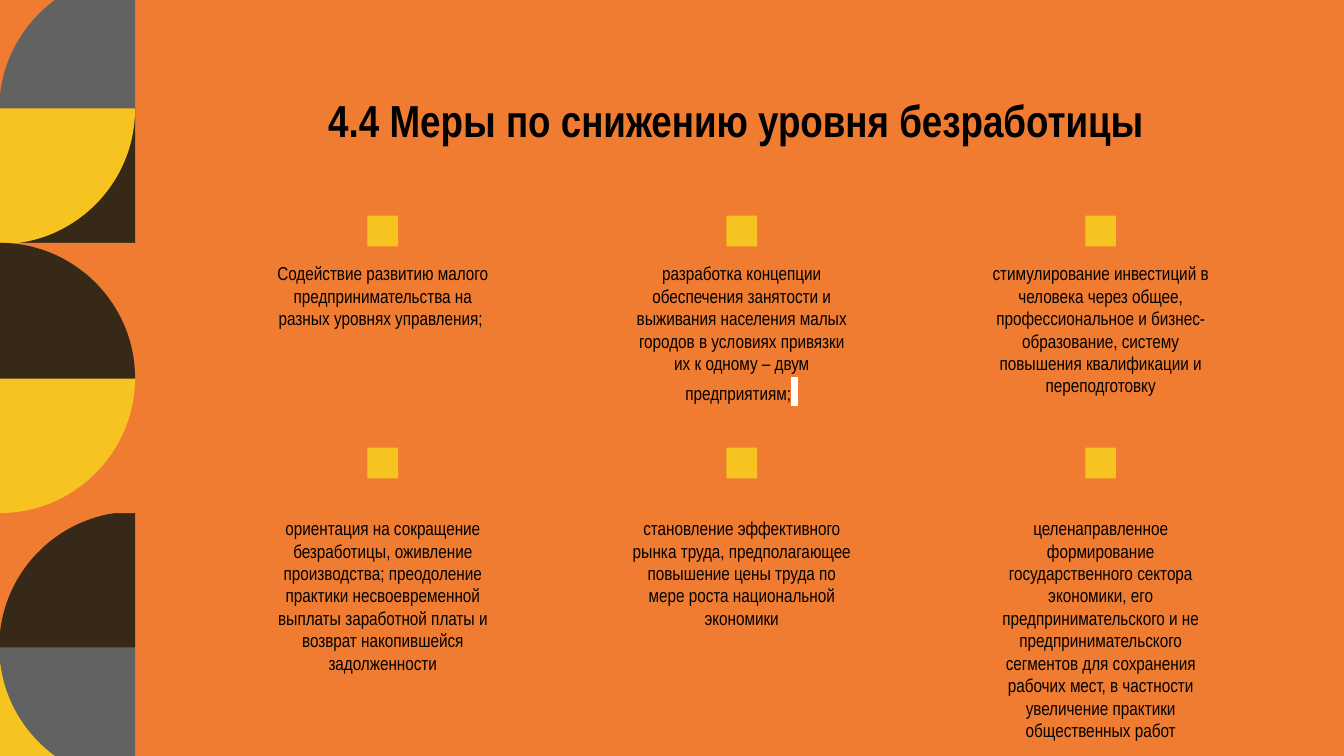
from lxml import etree
from pptx import Presentation
from pptx.dml.color import RGBColor
from pptx.enum import shapes, text
from pptx.oxml.ns import qn
from pptx.util import Pt

ORANGE, YELLOW, GRAY, BROWN = "F07C31", "F7C320", "626262", "362918"
BLACK, WHITE = "000000", "FFFFFF"
FONT = "Arial Narrow"

TILE = 72
FIRST_TILE_TOP = -13.5
ARC_PULL = 0.55
# Row, disc colour, corner that is the disc's centre (right, down), colour behind;
# listed from back to front
TILES = [
    (0, GRAY, (1, 1), ORANGE),
    (1, YELLOW, (0, 0), BROWN),
    (5, GRAY, (1, 0), YELLOW),
    (4, BROWN, (1, 1), ORANGE),
    (3, YELLOW, (0, 0), ORANGE),
    (2, BROWN, (0, 1), ORANGE),
]

COLUMN_LEFT, COLUMN_STEP = 138.8, 192.3
BOX_WIDTH, BOX_HEIGHT = 132.5, 76.3
MARKER = 16.5
# Marker top, text top, texts of the row
ROWS = [
    (115.5, 133.2, [
        "Содействие развитию малого предпринимательства на разных уровнях управления; ",
        "разработка концепции обеспечения занятости и выживания населения малых "
        "городов в условиях привязки их к одному – двум предприятиям;",
        "стимулирование инвестиций в человека через общее, профессиональное и "
        "бизнес-образование, систему повышения квалификации и переподготовку",
    ]),
    (239.9, 269.8, [
        "ориентация на сокращение безработицы, оживление производства; преодоление "
        "практики несвоевременной выплаты заработной платы и возврат накопившейся "
        "задолженности",
        "становление эффективного рынка труда, предполагающее повышение цены труда "
        "по мере роста национальной экономики",
        "целенаправленное формирование государственного сектора экономики, его "
        "предпринимательского и не предпринимательского сегментов для сохранения "
        "рабочих мест, в частности увеличение практики общественных работ",
    ]),
]


def rgb(value):
    return RGBColor.from_string(value)


def paint(shape, colour, outlined=False):
    shape.shadow.inherit = False
    shape.fill.solid()
    shape.fill.fore_color.rgb = rgb(colour)
    if outlined:
        shape.line.color.rgb = rgb(colour)
        shape.line.width = Pt(0.75)
    else:
        shape.line.fill.background()


def bend_last_side(shape, points):
    """Turn the last straight segment into a curve through the given control points."""
    line = shape._element.findall(".//" + qn("a:lnTo"))[-1]
    curve = etree.Element(qn("a:cubicBezTo"))
    for x, y in points:
        etree.SubElement(curve, qn("a:pt"), x=str(Pt(x)), y=str(Pt(y)))
    line.getparent().replace(line, curve)


def add_tile(page, top, disc, corner, behind):
    """Draw the outer corner of a square, then the quarter disc that fills the rest."""
    right, down = corner
    centre = (right * TILE, down * TILE)
    outer = (TILE - centre[0], TILE - centre[1])
    ends = [(outer[0], centre[1]), (centre[0], outer[1])]
    controls = [tuple(a + ARC_PULL * (b - a) for a, b in zip(end, outer)) for end in ends]
    for apex, colour in ((outer, behind), (centre, disc)):
        start, *others = [(Pt(x), Pt(top + y)) for x, y in [apex] + ends]
        builder = page.shapes.build_freeform(*start)
        builder.add_line_segments(others, close=False)
        builder.add_line_segments([], close=True)
        piece = builder.convert_to_shape()
        bend_last_side(piece, controls + [ends[1]])
        paint(piece, colour, outlined=True)


def add_marker(page, left, top):
    marker = page.shapes.add_shape(
        shapes.MSO_SHAPE.RECTANGLE, Pt(left), Pt(top), Pt(MARKER), Pt(MARKER))
    paint(marker, YELLOW)


def add_span(para, wording, **font):
    span = para.add_run()
    span.text = wording
    for name, value in font.items():
        setattr(span.font, name, value)
    span.font.color.rgb = rgb(BLACK)
    return span


def add_text(page, area, wording, **font):
    box = page.shapes.add_textbox(*(Pt(length) for length in area))
    frame = box.text_frame
    settings = {"word_wrap": True, "vertical_anchor": text.MSO_ANCHOR.TOP}
    settings.update({f"margin_{side}": Pt(7.2) for side in ("left", "top", "right", "bottom")})
    for name, value in settings.items():
        setattr(frame, name, value)
    para = frame.paragraphs[0]
    para.alignment = text.PP_ALIGN.CENTER
    add_span(para, wording, name=FONT, **font)
    return para


def highlight(span, colour):
    mark = etree.Element(qn("a:highlight"))
    etree.SubElement(mark, qn("a:srgbClr"), val=colour)
    span._r.rPr.find(qn("a:solidFill")).addnext(mark)


def main():
    deck = Presentation()
    deck.slide_width, deck.slide_height = Pt(720), Pt(405)
    page = deck.slides.add_slide(deck.slide_layouts[6])
    page.background.fill.solid()
    page.background.fill.fore_color.rgb = rgb(ORANGE)

    for row, *look in TILES:
        add_tile(page, FIRST_TILE_TOP + row * TILE, *look)

    title = add_text(page, (131, 42.5, 532, 47.5), "4.4 Меры по снижению уровня безработицы",
                     size=Pt(24), bold=True)
    add_span(title, " ", name=FONT, size=Pt(24), bold=False)

    for row, (marker_top, text_top, wordings) in enumerate(ROWS):
        for column, wording in enumerate(wordings):
            left = COLUMN_LEFT + column * COLUMN_STEP
            add_marker(page, left + (BOX_WIDTH - MARKER) / 2, marker_top)
            para = add_text(page, (left, text_top, BOX_WIDTH, BOX_HEIGHT), wording, size=Pt(10))
            if (row, column) == (0, 1):
                space = add_span(para, " ", name="Times New Roman", size=Pt(14))
                highlight(space, WHITE)

    deck.save("out.pptx")


if __name__ == "__main__":
    main()
